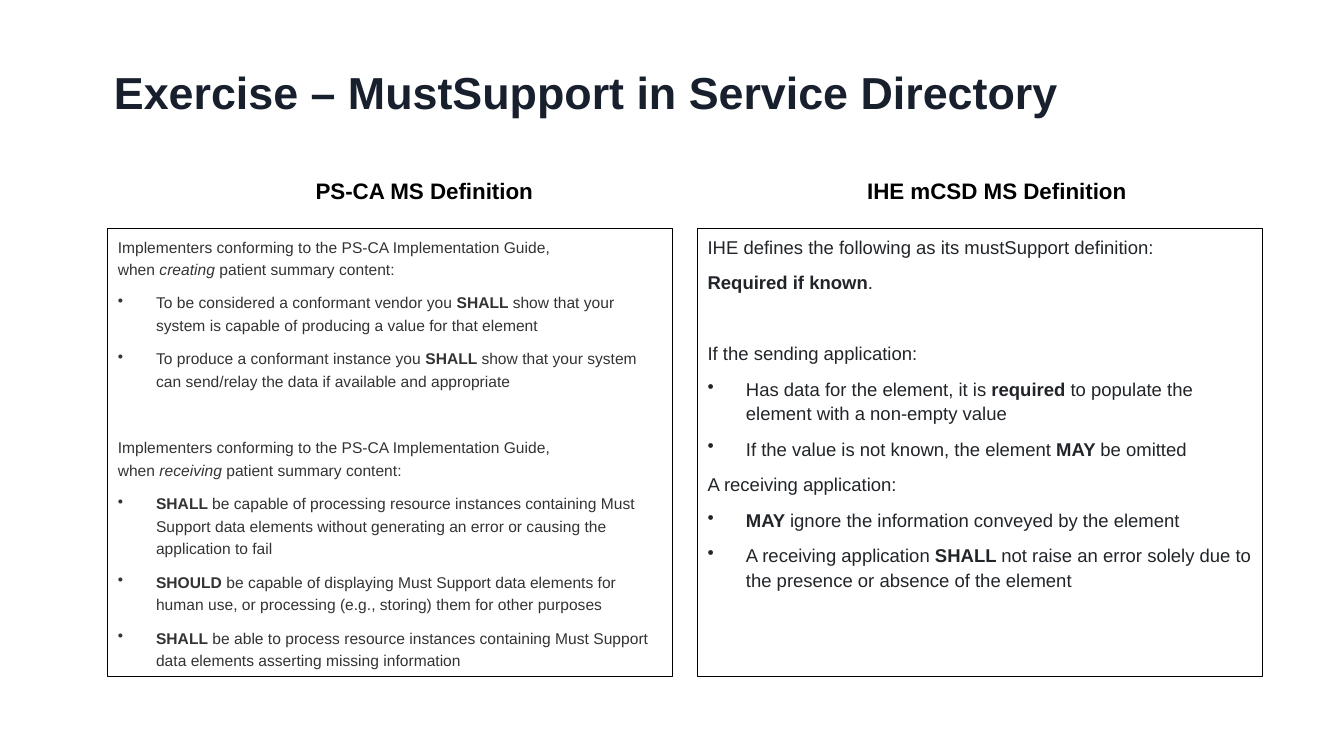
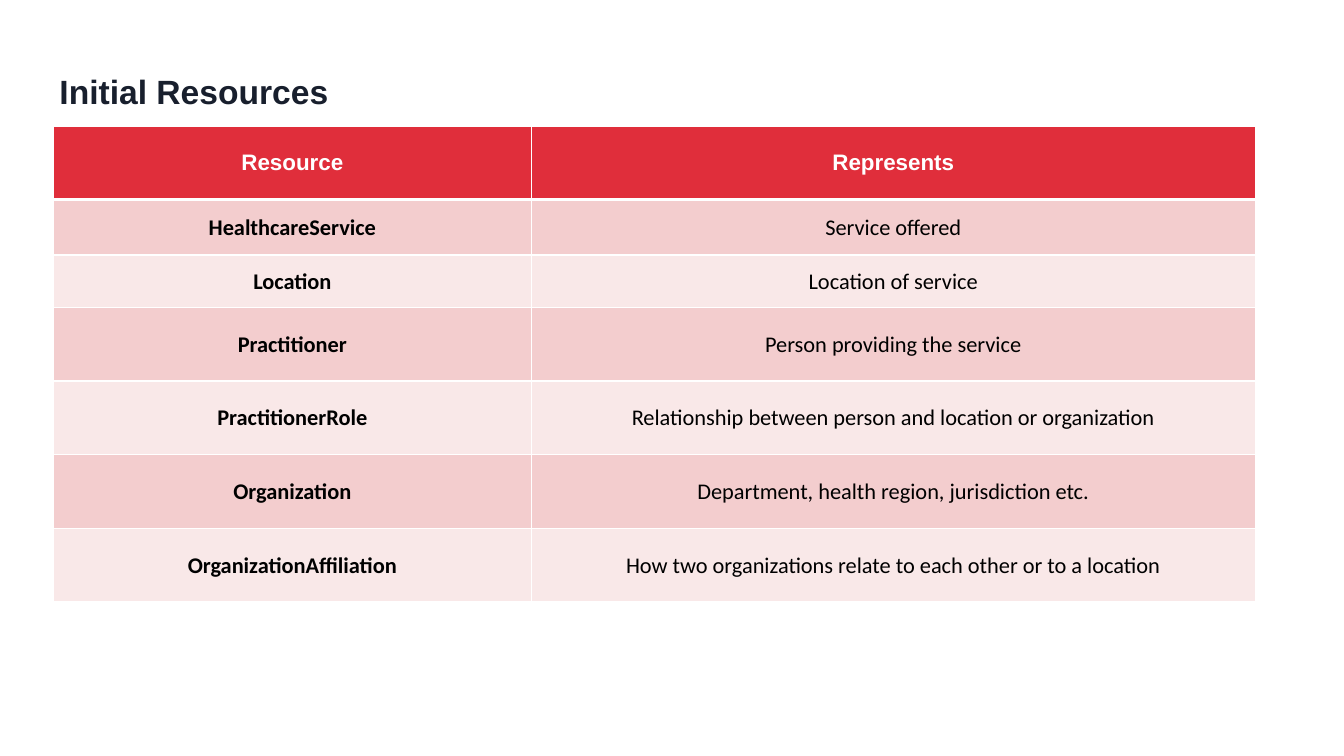
from lxml.etree import SubElement
from pptx import Presentation
from pptx.dml.color import RGBColor
from pptx.enum.shapes import MSO_SHAPE
from pptx.enum.text import MSO_ANCHOR, PP_ALIGN
from pptx.oxml.ns import qn
from pptx.util import Inches, Pt

WIDTH, HEIGHT = 13.33, 7.5
TITLE_TOP, TITLE_HEIGHT = 0.56, 0.69
TITLE_INK, BLACK, WHITE = "181F2D", "000000", "FFFFFF"
RED, ROSE, PALE_ROSE = "E02E3B", "F3CDCE", "F9E8E8"
NBSP = chr(160)

PANEL_LEFT, PANEL_TOP = 1.07, 2.27
PANEL_WIDTH, PANEL_HEIGHT, PANEL_GAP = 5.6, 4.44, 0.25
LABEL_TOP, LABEL_HEIGHT = 1.7, 0.38

TABLE_LEFT, TABLE_WIDTH = 0.53, 11.92
COLUMN_WIDTHS = [4.74, 7.18]
ROW_HEIGHTS = [0.73, 0.55, 0.52] + [0.73] * 4

GUIDE_INTRO = "Implementers conforming to the PS-CA Implementation Guide, when"
CONTENT = "patient summary content:"
PS_CA = [
    f"{GUIDE_INTRO}{NBSP}_creating_{NBSP}{CONTENT}",
    "• To be considered a conformant vendor you *SHALL *show that your system is capable of "
    "producing a value for that element",
    "• To produce a conformant instance you *SHALL *show that your system can send/relay the "
    "data if available and appropriate",
    f"{GUIDE_INTRO}{NBSP}_receiving_{NBSP}{CONTENT}",
    "• *SHALL *be capable of processing resource instances containing Must Support data elements "
    "without generating an error or causing the application to fail",
    "• *SHOULD* be capable of displaying Must Support data elements for human use, or processing "
    "(e.g., storing) them for other purposes",
    "• *SHALL* be able to process resource instances containing Must Support data elements "
    "asserting missing information",
]
MCSD = [
    "IHE defines the following as its mustSupport definition:",
    "*Required if known*.",
    "If the sending application:",
    "• Has data for the element, it is *required* to populate the element with a non-empty value",
    "• If the value is not known, the element *MAY *be omitted",
    "A receiving application:",
    "• *MAY *ignore the information conveyed by the element",
    "• A receiving application *SHALL *not raise an error solely due to the presence or absence "
    "of the element",
]
RESOURCES = [
    ("Resource", "Represents"),
    ("HealthcareService", "Service offered"),
    ("Location", "Location of service"),
    ("Practitioner", "Person providing the service"),
    ("PractitionerRole", "Relationship between person and location or organization"),
    ("Organization", "Department, health region, jurisdiction etc."),
    ("OrganizationAffiliation", "How two organizations relate to each other or to a location"),
]


def rgb(value):
    """Turn a hex string into a colour."""
    return RGBColor.from_string(value)


def style(font, size, color, bold=False, name="Arial"):
    """Set the look of a font."""
    font.name, font.size, font.bold = name, Pt(size), bold
    font.color.rgb = rgb(color)


def add_line(slide, text, left, top, width, height, size, color, wrap=True):
    """Add a bold line of text centred in its height."""
    tf = slide.shapes.add_textbox(*map(Inches, (left, top, width, height))).text_frame
    tf.word_wrap = wrap
    tf.vertical_anchor = MSO_ANCHOR.MIDDLE
    tf.margin_left = tf.margin_right = tf.margin_top = tf.margin_bottom = Inches(0.06)
    tf.text = text
    style(tf.paragraphs[0].runs[0].font, size, color, bold=True)


def add_title(slide, text, left, width, size):
    """Add the slide title."""
    add_line(slide, text, left, TITLE_TOP, width, TITLE_HEIGHT, size, TITLE_INK)


def add_bullet(p):
    """Give a paragraph a hanging bullet."""
    pPr = p._p.get_or_add_pPr()
    pPr.set("marL", str(Inches(0.38)))
    pPr.set("indent", str(-Inches(0.38)))
    SubElement(pPr, qn("a:buChar")).set("char", "•")


def add_marked_runs(p, text, size, color):
    """Add runs, with *bold* and _italic_ marks applied."""
    for i, part in enumerate(text.split("*")):
        for j, piece in enumerate(part.split("_")):
            if piece:
                r = p.add_run()
                r.text = piece
                style(r.font, size, color, bold=i % 2 == 1)
                r.font.italic = j % 2 == 1


def add_panel(slide, column, lines, size, color, spacing, break_at, break_space):
    """Add an outlined panel of paragraphs with one wider break."""
    left = PANEL_LEFT + column * (PANEL_WIDTH + PANEL_GAP)
    box = map(Inches, (left, PANEL_TOP, PANEL_WIDTH, PANEL_HEIGHT))
    sp = slide.shapes.add_shape(MSO_SHAPE.RECTANGLE, *box)
    sp.shadow.inherit = False
    sp.fill.background()
    sp.line.color.rgb = rgb(BLACK)
    sp.line.width = Pt(0.75)
    tf = sp.text_frame
    tf.word_wrap = True
    tf.vertical_anchor = MSO_ANCHOR.TOP
    for i, line in enumerate(lines):
        p = tf.add_paragraph() if i else tf.paragraphs[0]
        if line.startswith("• "):
            add_bullet(p)
        p.alignment = PP_ALIGN.LEFT
        p.line_spacing = spacing
        p.space_after = Pt(4)
        if i:
            p.space_before = Pt(break_space if i == break_at else 4)
        add_marked_runs(p, line.removeprefix("• "), size, color)


def set_borders(cell, **widths):
    """Draw white cell borders of the given widths in points."""
    tcPr = cell._tc.get_or_add_tcPr()
    for i, side in enumerate("LRTB"):
        ln = SubElement(tcPr, qn(f"a:ln{side}"), w=str(Pt(widths.get(side, 1))))
        fill = SubElement(ln, qn("a:solidFill"))
        SubElement(fill, qn("a:srgbClr"), val=WHITE)
        tcPr.insert(i, ln)


def fill_cell(cell, text, row, column):
    """Write and format one table cell."""
    header = row == 0
    cell.text = text
    cell.vertical_anchor = MSO_ANCHOR.MIDDLE
    p = cell.text_frame.paragraphs[0]
    p.alignment = PP_ALIGN.CENTER
    font = p.runs[0].font
    if header:
        style(font, 16, WHITE, bold=True)
        set_borders(cell, B=3)
    else:
        style(font, 16, BLACK, bold=column == 0, name="Calibri")
        cell.margin_left = cell.margin_right = Inches(0.04)
        cell.margin_top, cell.margin_bottom = Inches(0.01), 0
        set_borders(cell, T=3 if row == 1 else 1)
    cell.fill.solid()
    cell.fill.fore_color.rgb = rgb(RED if header else ROSE if row % 2 else PALE_ROSE)


def add_resource_table(slide, rows):
    """Add the banded table right below the title."""
    box = (TABLE_LEFT, TITLE_TOP + TITLE_HEIGHT, TABLE_WIDTH, sum(ROW_HEIGHTS))
    table = slide.shapes.add_table(len(rows), len(COLUMN_WIDTHS), *map(Inches, box)).table
    table.horz_banding = False
    for column, width in zip(table.columns, COLUMN_WIDTHS):
        column.width = Inches(width)
    for row, height in zip(table.rows, ROW_HEIGHTS):
        row.height = Inches(height)
    for i, values in enumerate(rows):
        for j, value in enumerate(values):
            fill_cell(table.cell(i, j), value, i, j)


def build_definitions(slide):
    """Compare the two MustSupport definitions."""
    add_title(slide, "Exercise – MustSupport in Service Directory", PANEL_LEFT, 11.15, 32)
    labels = [("PS-CA MS Definition", 3.07, 2.3), ("IHE mCSD MS Definition", 8.54, 2.72)]
    for text, left, width in labels:
        add_line(slide, text, left, LABEL_TOP, width, LABEL_HEIGHT, 16, BLACK, wrap=False)
    add_panel(slide, 0, PS_CA, 11.1, "333333", 1.2, 3, 27.5)
    add_panel(slide, 1, MCSD, 13.2, "212529", 1.1, 2, 29)


def build_resources(slide):
    """List the initial resources."""
    add_title(slide, "Initial Resources", TABLE_LEFT, TABLE_WIDTH, 24)
    add_resource_table(slide, RESOURCES)


def main():
    """Build and save the presentation."""
    prs = Presentation()
    prs.slide_width, prs.slide_height = Inches(WIDTH), Inches(HEIGHT)
    for build in (build_definitions, build_resources):
        build(prs.slides.add_slide(prs.slide_layouts[6]))
    prs.save("out.pptx")


if __name__ == "__main__":
    main()
